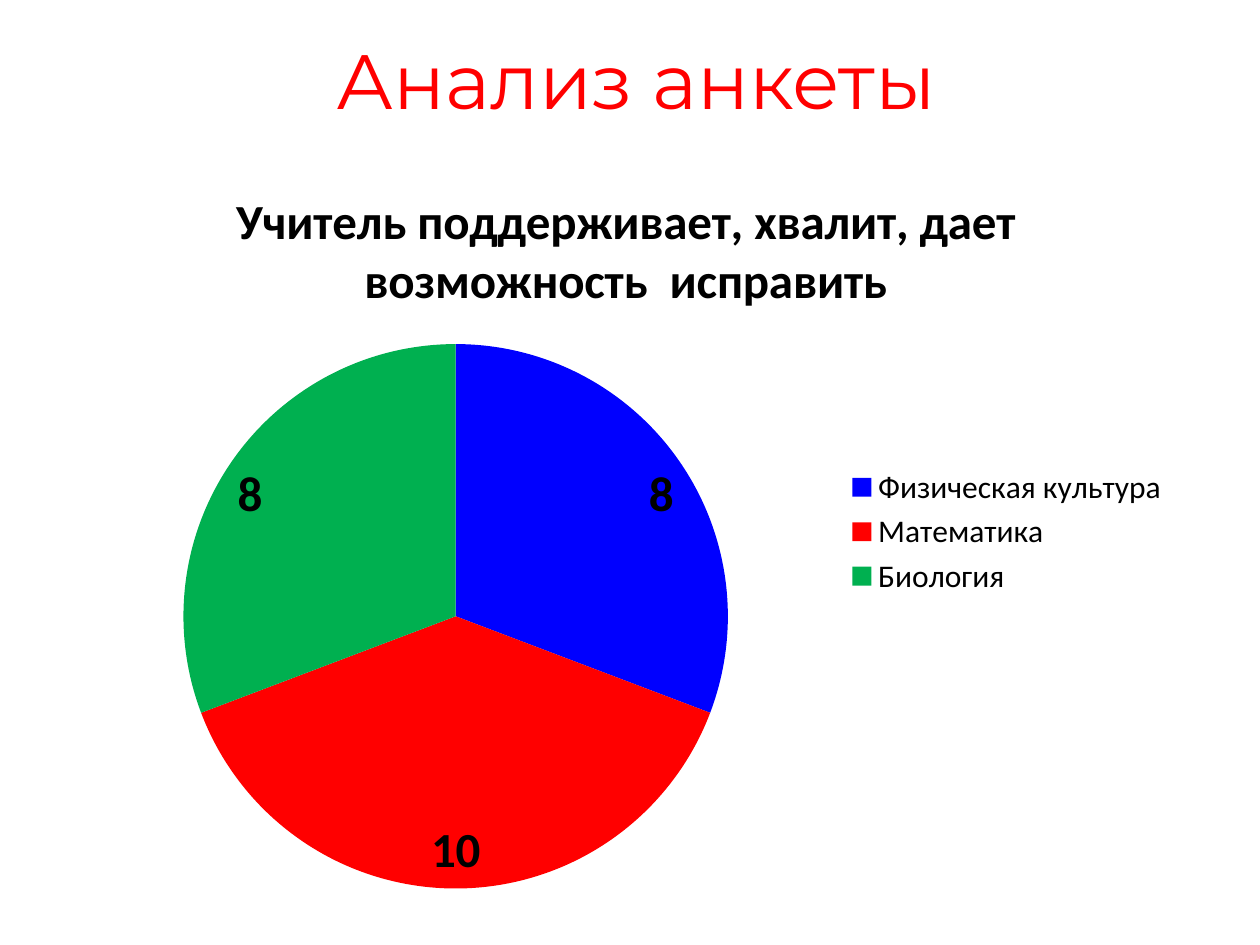
from pptx import Presentation
from pptx.chart.data import CategoryChartData
from pptx.dml.color import RGBColor
from pptx.enum.chart import XL_CHART_TYPE, XL_LABEL_POSITION as LabelPosition, XL_LEGEND_POSITION as LegendPosition
from pptx.enum.text import MSO_ANCHOR, PP_ALIGN
from pptx.util import Pt

COLORS = {"heading": "FF0000", "text": "000000"}
QUESTION = "Учитель поддерживает, хвалит, дает возможность  исправить"
SUBJECTS = [
    ("Физическая культура", 8, "0000FF"),
    ("Математика", 10, "FF0000"),
    ("Биология", 8, "00B050"),
]


def style_font(font, color, **values):
    font.color.rgb = RGBColor.from_string(COLORS[color])
    for name, value in values.items():
        setattr(font, name, value)


prs = Presentation()
prs.slide_width, prs.slide_height = Pt(720), Pt(540)
slide = prs.slides.add_slide(prs.slide_layouts[5])

# Heading
heading = slide.shapes.title
for name, value in {"left": 39.6, "top": 0, "width": 648, "height": 90}.items():
    setattr(heading, name, Pt(value))
heading.text_frame.text = "Анализ анкеты"
heading.text_frame.vertical_anchor = MSO_ANCHOR.MIDDLE
heading_line = heading.text_frame.paragraphs[0]
heading_line.alignment = PP_ALIGN.CENTER
style_font(heading_line.runs[0].font, "heading", name="Montserrat", size=Pt(44))

# Answers by subject
answers = CategoryChartData()
answers.categories = [subject for subject, _, _ in SUBJECTS]
answers.add_series(QUESTION, [count for _, count, _ in SUBJECTS])
pie = slide.shapes.add_chart(
    XL_CHART_TYPE.PIE, Pt(39.6), Pt(90), Pt(635.76), Pt(427.68), answers
).chart
style_font(pie.font, "text", name="Calibri", size=Pt(18))

pie.has_title = True
pie.chart_title.include_in_layout = False
question = pie.chart_title.text_frame
question.text = QUESTION
style_font(question.paragraphs[0].runs[0].font, "text", name="Calibri", size=Pt(28), bold=True)

pie.has_legend = True
pie.legend.position = LegendPosition.RIGHT
pie.legend.include_in_layout = False
style_font(pie.legend.font, "text", name="Calibri", size=Pt(18))

plot = pie.plots[0]
plot.vary_by_categories = True
for index, (_, _, color) in enumerate(SUBJECTS):
    slice_fill = plot.series[0].points[index].format.fill
    slice_fill.solid()
    slice_fill.fore_color.rgb = RGBColor.from_string(color)

plot.has_data_labels = True
counts = plot.data_labels
for name, value in {"show_value": True, "show_percentage": False, "position": LabelPosition.INSIDE_END}.items():
    setattr(counts, name, value)
style_font(counts.font, "text", name="Calibri", size=Pt(28), bold=True)

prs.save("out.pptx")
